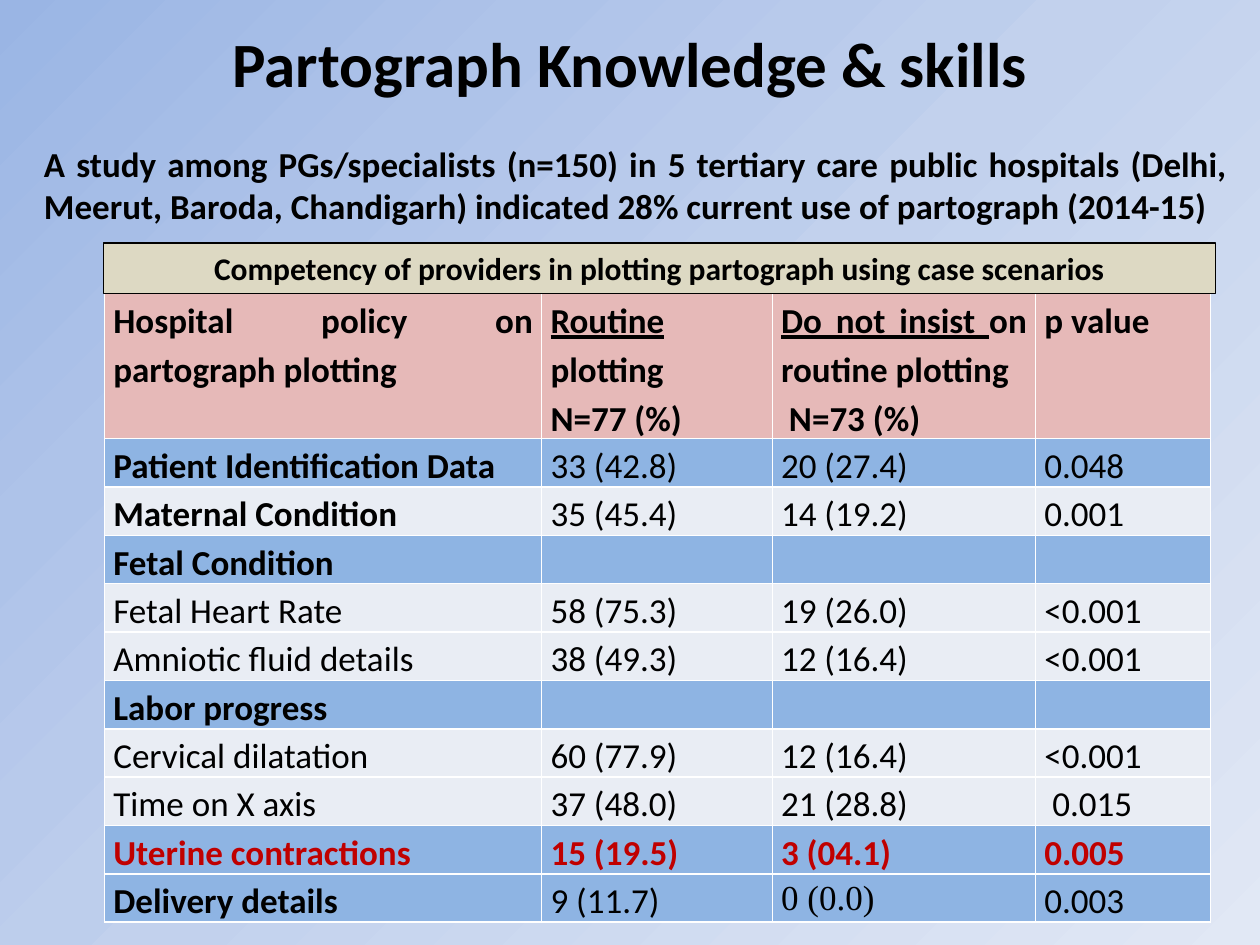
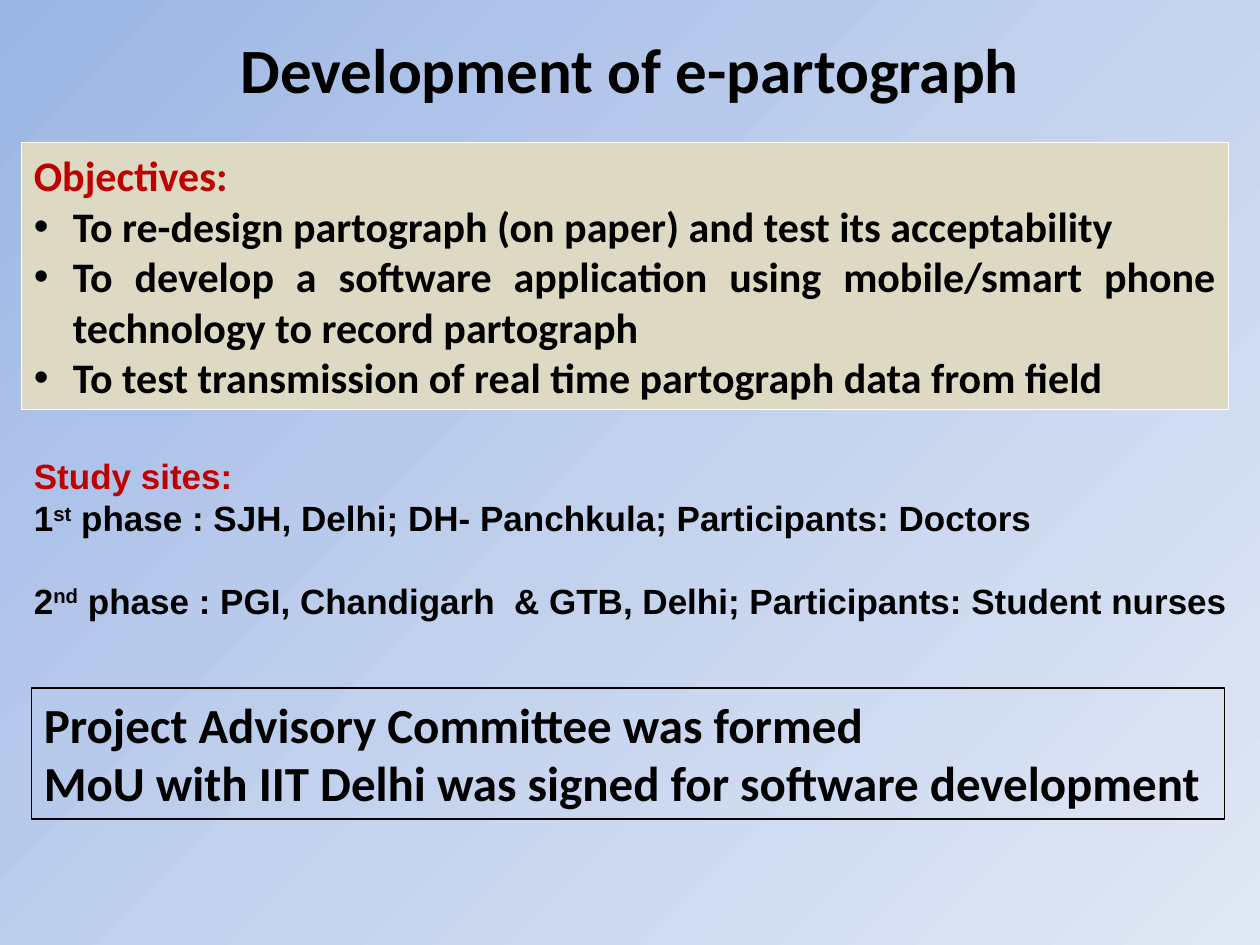
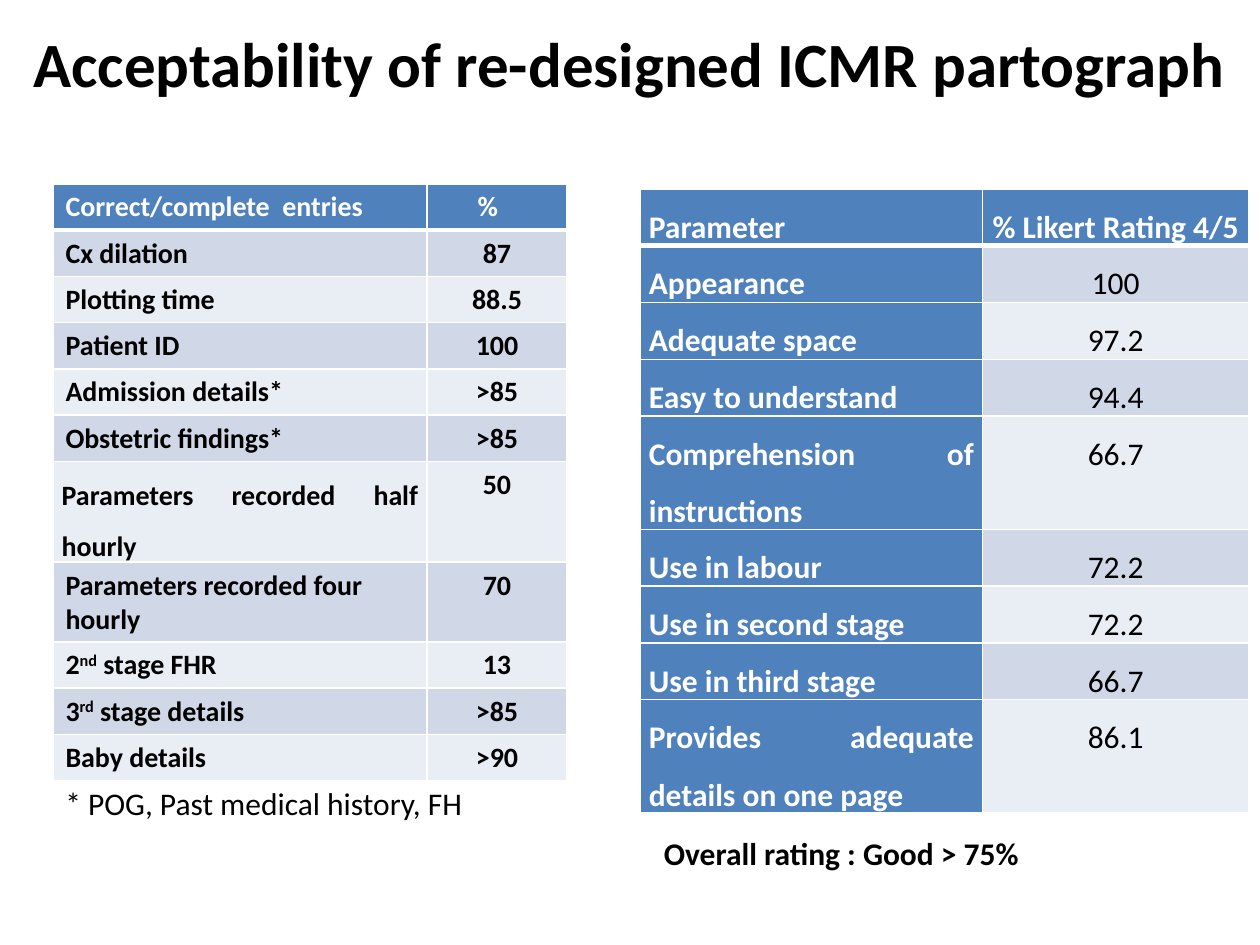
from collections import namedtuple

from lxml.etree import SubElement
from pptx import Presentation
from pptx.dml.color import RGBColor
from pptx.enum.shapes import MSO_SHAPE
from pptx.enum.text import MSO_ANCHOR, PP_ALIGN
from pptx.oxml.ns import qn
from pptx.util import Inches, Pt

BLACK, WHITE, RED = "000000", "FFFFFF", "C00000"
SAND, ROSE, SKY = "DDD9C3", "E6B9B8", "8EB4E3"
BLUE, BAND, PALE = "4F81BD", "D0D8E8", "E9EDF4"
GRADIENT = {0: "9AB5E4", 25: "AEC3E9", 38: "B8CAEB",
            44: "BDCEEC", 50: "C2D1ED", 100: "E1E8F5"}

BASE_FONT = {"name": "Calibri", "size": Pt(18), "bold": False, "color": BLACK}
BASE_LAYOUT = {"alignment": PP_ALIGN.LEFT}
JUSTIFIED = {"alignment": PP_ALIGN.JUSTIFY}
CENTERED = {"alignment": PP_ALIGN.CENTER}
TIGHT = {"margin_left": Inches(0.07), "margin_right": Inches(0.07),
         "margin_top": 0, "margin_bottom": 0}
RAISED = {"baseline": 30}

Paragraph = namedtuple("Paragraph", "runs font layout", defaults=({}, {}))
CellStyle = namedtuple("CellStyle", "fill font layout margins", defaults=({},))


def rgb(color):
    return RGBColor.from_string(color)


def apply_font(run, values):
    for name, value in values.items():
        if name == "color":
            run.font.color.rgb = rgb(value)
        elif name == "baseline":
            run._r.get_or_add_rPr().set("baseline", str(value * 1000))
        else:
            setattr(run.font, name, value)


def apply_layout(paragraph, values):
    """Set paragraph attributes; left, hanging and bullet go into the XML."""
    properties = paragraph._p.get_or_add_pPr()
    for name, value in values.items():
        if name == "left":
            properties.set("marL", str(Inches(value)))
        elif name == "hanging":
            properties.set("indent", str(-Inches(value)))
        elif name == "bullet":
            SubElement(properties, qn("a:buFont"), typeface="Arial")
            SubElement(properties, qn("a:buChar"), char=value)
        else:
            setattr(paragraph, name, value)


def write(frame, content, font, layout):
    """Fill a frame from a string, a Paragraph or a list of both."""
    for index, item in enumerate(content if type(content) is list else [content]):
        item = Paragraph([item]) if isinstance(item, str) else item
        paragraph = frame.add_paragraph() if index else frame.paragraphs[0]
        apply_layout(paragraph, {**BASE_LAYOUT, **layout, **item.layout})
        for part in item.runs:
            text, changes = (part, {}) if isinstance(part, str) else part
            run = paragraph.add_run()
            run.text = text
            apply_font(run, {**BASE_FONT, **font, **item.font, **changes})


def set_borders(cell, widths):
    properties = cell._tc.get_or_add_tcPr()
    for side, width in widths.items():
        line = SubElement(properties, qn(f"a:ln{side}"), w=str(Pt(width)))
        fill = SubElement(line, qn("a:solidFill"))
        SubElement(fill, qn("a:srgbClr"), val=WHITE)


class Deck:
    def __init__(self):
        self.presentation = Presentation()
        self.presentation.slide_width = Inches(10)
        self.presentation.slide_height = Inches(7.5)
        self.slide = None

    def add_slide(self, title, title_box, gradient=True):
        self.slide = self.presentation.slides.add_slide(self.presentation.slide_layouts[6])
        if gradient:
            self.paint_gradient()
        self.text(title_box, title, {"size": Pt(36), "bold": True}, CENTERED,
                  MSO_ANCHOR.MIDDLE)

    def paint_gradient(self):
        fill = self.slide.background.fill
        fill.gradient()
        fill.gradient_angle = 315
        stops = next(self.slide.element.iter(qn("a:gsLst")))
        for stop in list(stops):
            stops.remove(stop)
        for position, color in GRADIENT.items():
            stop = SubElement(stops, qn("a:gs"), pos=str(position * 1000))
            SubElement(stop, qn("a:srgbClr"), val=color)

    def text(self, box, content, font, layout={}, anchor=MSO_ANCHOR.TOP):
        shape = self.slide.shapes.add_textbox(*map(Inches, box))
        self.fill_frame(shape, content, font, layout, anchor)

    def panel(self, box, content, font, layout={}, fill=None, line=BLACK,
              anchor=MSO_ANCHOR.TOP):
        shape = self.slide.shapes.add_shape(MSO_SHAPE.RECTANGLE, *map(Inches, box))
        shape.shadow.inherit = False
        if fill:
            shape.fill.solid()
            shape.fill.fore_color.rgb = rgb(fill)
        else:
            shape.fill.background()
        shape.line.color.rgb = rgb(line)
        shape.line.width = Pt(0.75)
        self.fill_frame(shape, content, font, layout, anchor)

    def fill_frame(self, shape, content, font, layout, anchor):
        frame = shape.text_frame
        frame.word_wrap = True
        frame.vertical_anchor = anchor
        write(frame, content, font, layout)

    def table(self, left, top, widths, heights, rows, style, header_rule=1):
        """Draw rows; style(row, column) gives the CellStyle of each cell."""
        box = map(Inches, (left, top, sum(widths), sum(heights)))
        table = self.slide.shapes.add_table(len(rows), len(widths), *box).table
        for column, width in zip(table.columns, widths):
            column.width = Inches(width)
        for r, (row, height) in enumerate(zip(rows, heights)):
            table.rows[r].height = Inches(height)
            for c, content in enumerate(row):
                cell, look = table.cell(r, c), style(r, c)
                for name, value in look.margins.items():
                    setattr(cell, name, value)
                set_borders(cell, {"L": 1, "R": 1,
                                   "T": header_rule if r == 1 else 1,
                                   "B": header_rule if r == 0 else 1})
                cell.fill.solid()
                cell.fill.fore_color.rgb = rgb(look.fill)
                if content:
                    write(cell.text_frame, content, look.font, look.layout)


def add_knowledge_slide(deck):
    deck.add_slide("Partograph Knowledge & skills", (0.5, 0.08, 9, 0.83))
    deck.text((0.25, 1.08, 9.59, 0.77),
              "A study among PGs/specialists (n=150) in 5 tertiary care public hospitals "
              "(Delhi, Meerut, Baroda, Chandigarh) indicated 28% current use of "
              "partograph (2014-15)",
              {"size": Pt(20), "bold": True}, JUSTIFIED)
    underlined = {"underline": True}
    rows = [
        ("Hospital policy on partograph plotting",
         [Paragraph([("Routine", underlined), " plotting"]), "N=77 (%)"],
         [Paragraph([("Do not insist ", underlined), "on routine plotting"]), " N=73 (%)"],
         "p value"),
        ("Patient Identification Data", "33 (42.8)", "20 (27.4)", "0.048"),
        ("Maternal Condition", "35 (45.4)", "14 (19.2)", "0.001"),
        ("Fetal Condition", "", "", ""),
        ("Fetal Heart Rate", "58 (75.3)", "19 (26.0)", "<0.001"),
        ("Amniotic fluid details", "38 (49.3)", "12 (16.4)", "<0.001"),
        ("Labor progress", "", "", ""),
        ("Cervical dilatation", "60 (77.9)", "12 (16.4)", "<0.001"),
        ("Time on X axis", "37 (48.0)", "21 (28.8)", " 0.015"),
        ("Uterine contractions", "15 (19.5)", "3 (04.1)", "0.005"),
        ("Delivery details", "9 (11.7)",
         Paragraph(["0 (0.0)"], {"name": "Times New Roman"}), "0.003"),
    ]
    blue_rows, maternal, contractions = {1, 3, 6, 9, 10}, 2, 9

    def style(row, column):
        is_heading = column == 0 and (row in blue_rows or row == maternal)
        font = {"size": Pt(20), "bold": row in (0, contractions) or is_heading,
                "color": RED if row == contractions else BLACK}
        fill = ROSE if row == 0 else SKY if row in blue_rows else PALE
        return CellStyle(fill, font, {**JUSTIFIED, "line_spacing": 1.15}, TIGHT)

    deck.table(0.83, 2.33, (3.47, 1.83, 2.09, 1.39), [1.15] + [0.38] * 10, rows, style)
    deck.panel((0.82, 1.93, 8.83, 0.4),
               "Competency of providers in plotting partograph using case scenarios",
               {"bold": True}, CENTERED, SAND)


def add_development_slide(deck):
    deck.add_slide("Development of e-partograph", (0.5, 0.08, 9, 0.92))
    objectives = [
        "To re-design partograph (on paper) and test its acceptability",
        "To develop a software application using mobile/smart phone technology "
        "to record partograph",
        "To test transmission of real time partograph data from field",
    ]
    deck.panel((0.17, 1.13, 9.58, 2.12),
               [Paragraph(["Objectives:"], {"color": RED})]
               + [Paragraph([goal], {}, {"bullet": "•"}) for goal in objectives],
               {"size": Pt(24), "bold": True},
               {**JUSTIFIED, "left": 0.31, "hanging": 0.31},
               SAND, WHITE, MSO_ANCHOR.MIDDLE)
    deck.text((0.17, 3.56, 9.75, 1.45), [
        Paragraph(["Study sites:"], {"color": RED}),
        Paragraph(["1", ("st", RAISED),
                   " phase : SJH, Delhi; DH- Panchkula; Participants: Doctors"]),
        Paragraph(["2", ("nd", RAISED),
                   " phase : PGI, Chandigarh  & GTB, Delhi; Participants: Student nurses"],
                  {}, {"space_before": Pt(23)}),
    ], {"name": "Arial", "size": Pt(20), "bold": True})
    deck.panel((0.25, 5.46, 9.47, 1.04),
               ["Project Advisory Committee was formed",
                "MoU with IIT Delhi was signed for software development"],
               {"size": Pt(28), "bold": True})


def add_acceptability_slide(deck):
    deck.add_slide("Acceptability of re-designed ICMR partograph",
                   (0.08, 0.08, 9.83, 0.83), gradient=False)
    entries = [
        ("Correct/complete  entries", Paragraph(["%"], {}, {"left": 0.3})),
        ("Cx dilation", "87"),
        ("Plotting time", "88.5"),
        ("Patient ID", "100"),
        ("Admission details*", ">85"),
        ("Obstetric findings*", ">85"),
        ("Parameters recorded half hourly", "50"),
        ("Parameters recorded four hourly", "70"),
        (Paragraph(["2", ("nd", RAISED), " stage FHR"]), "13"),
        (Paragraph(["3", ("rd", RAISED), " stage details"]), ">85"),
        ("Baby details", ">90"),
    ]
    ratings = [
        ("Parameter", "% Likert Rating 4/5"),
        ("Appearance", "100"),
        ("Adequate space", "97.2"),
        ("Easy to understand", "94.4"),
        ("Comprehension of instructions", "66.7"),
        ("Use in labour", "72.2"),
        ("Use in second stage", "72.2"),
        ("Use in third stage", "66.7"),
        ("Provides adequate details on one page", "86.1"),
    ]
    half_hourly = 6

    def band(row):
        return BLUE if row == 0 else BAND if row % 2 else PALE

    def entry_style(row, column):
        font = {"size": Pt(16), "bold": True, "color": BLACK if row else WHITE}
        if (row, column) == (half_hourly, 0):
            return CellStyle(band(row), font, {**JUSTIFIED, "line_spacing": 1.5}, TIGHT)
        return CellStyle(band(row), font, CENTERED if row and column else {})

    def rating_style(row, column):
        is_header = row == 0 or column == 0
        return CellStyle(BLUE if is_header else band(row),
                         {"bold": is_header, "color": WHITE if is_header else BLACK},
                         {**(CENTERED if column else JUSTIFIED), "line_spacing": 1.5},
                         TIGHT)

    deck.table(0.42, 1.46, (2.97, 1.11), [0.34] * len(entries), entries, entry_style, 3)
    deck.text((0.42, 6.17, 4, 0.4), "* POG, Past medical history, FH", {})
    deck.table(5.08, 1.5, (2.72, 2.11), [0.42] * len(ratings), ratings, rating_style, 3)
    deck.text((5.17, 6.57, 4.75, 0.4), "Overall rating : Good > 75%", {"bold": True})


def main():
    deck = Deck()
    add_knowledge_slide(deck)
    add_development_slide(deck)
    add_acceptability_slide(deck)
    deck.presentation.save("out.pptx")


if __name__ == "__main__":
    main()
